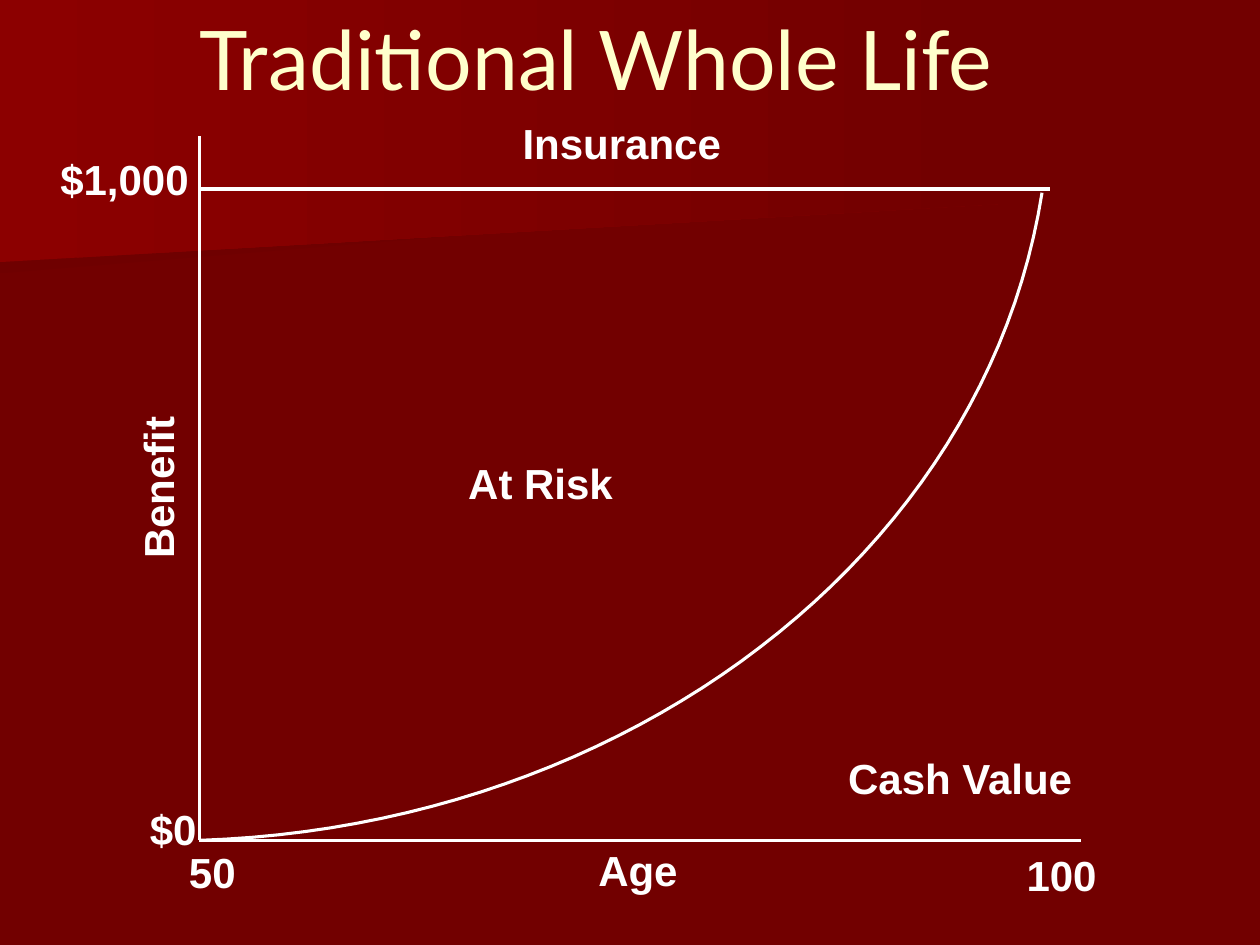
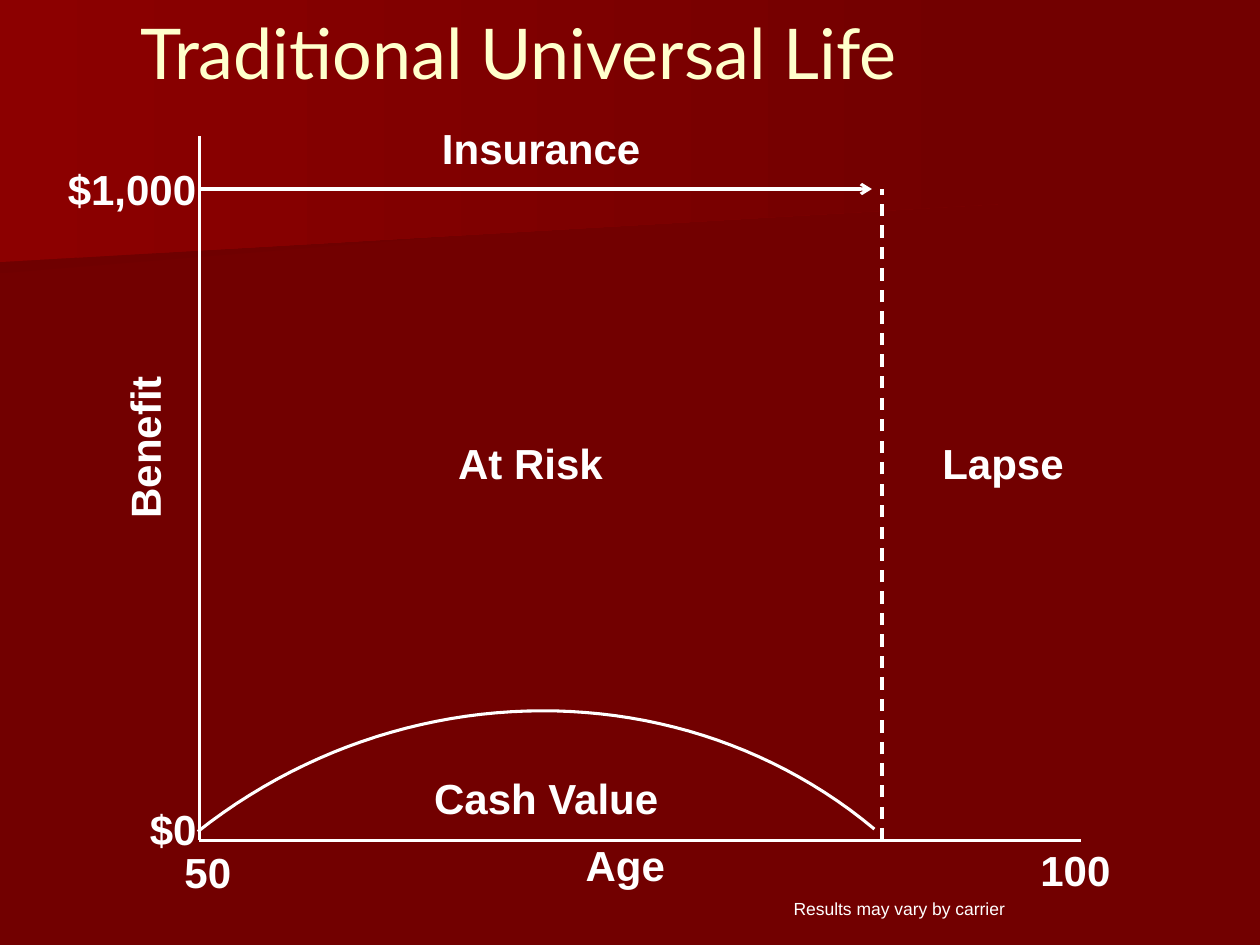
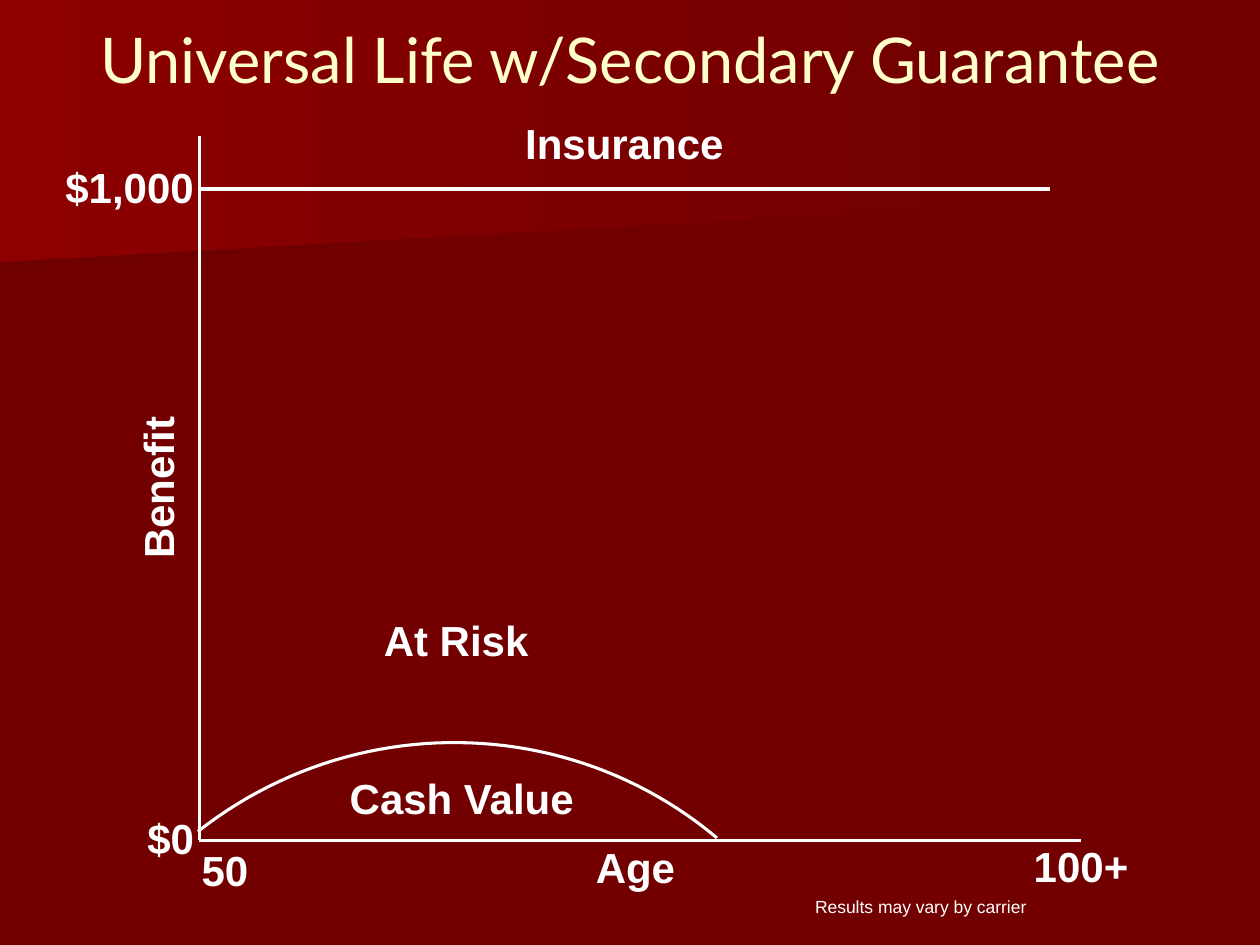
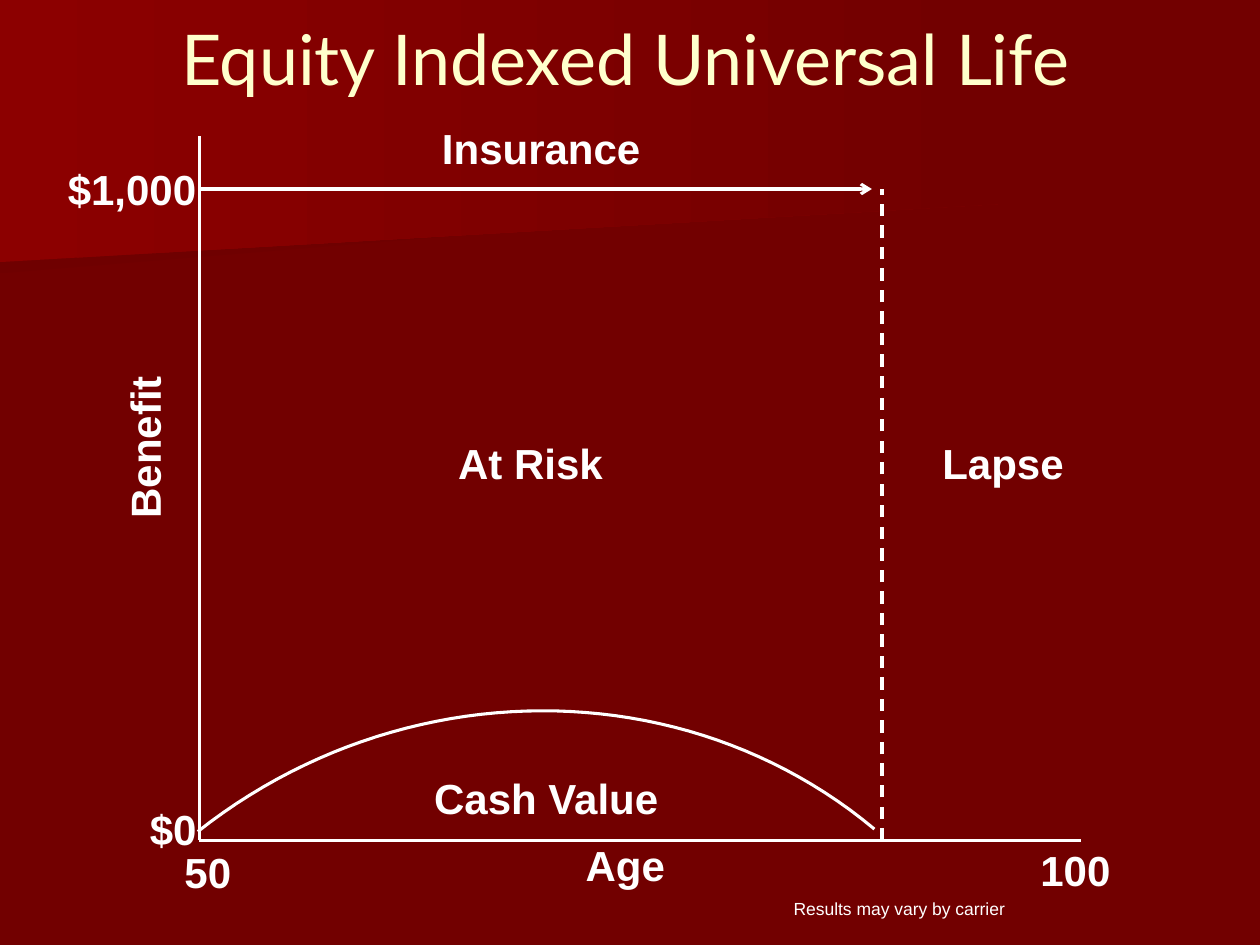
from lxml.etree import SubElement
from pptx import Presentation
from pptx.dml.color import RGBColor
from pptx.enum.dml import MSO_LINE
from pptx.enum.shapes import MSO_CONNECTOR
from pptx.enum.text import MSO_ANCHOR, MSO_AUTO_SIZE, PP_ALIGN
from pptx.oxml.ns import qn
from pptx.util import Inches, Pt

# Shared style
BACKGROUND, WHITE, CREAM = "720000", "FFFFFF", "FFFFCC"
LINE_WIDTH = 1.75
LABEL_HEIGHT = 0.5
CURVE_STEPS = 48

# Background bands: outline, left colour (each fades into the background)
BANDS = [
    ([(7.78, 1.53), (0, 2.17), (0, 1.01), (7.79, 1.01), (7.78, 1.28)], "6F0000"),
    ([(7.92, 1.62), (0, 2.08), (0, 0), (7.92, 0)], "8C0000"),
]

# Axes: shared by all charts
LEFT, TOP, RIGHT, BOTTOM = 1.58, 1.08, 8.58, 6.67
BENEFIT_LEVEL = 1.5
LAPSE_AGE = 7

# Centred labels: text, left, top, width
# Left labels: text, left, top, width, wrap
WHOLE_LIFE = {
    "benefit_end": 8.33,
    "lapses": False,
    "curve": [(1.58, 6.67), (4.99, 6.56), (7.82, 4.4), (8.27, 1.53)],
    "benefit_box": (-1.54, 3.62, 5.58),
    "centred": [("50", 1.33, 6.67, 0.71), ("100", 7.5, 6.69, 1.85),
                ("$0", 1, 6.33, 0.75), ("At Risk", 3.5, 3.58, 1.58),
                ("Cash Value", 6.58, 5.92, 2.08), ("Insurance", 1.56, 0.88, 6.75)],
    "left": [("$1,000", 0.38, 1.17, 1.51, True), ("Age", 4.65, 6.65, 1.44, True)],
    "note_at": None,
}
LAPSING = {
    "benefit_end": 6.92,
    "lapses": True,
    "curve": [(1.57, 6.6), (3.18, 5.33), (5.43, 5.32), (6.94, 6.58)],
    "benefit_box": (0.29, 3.3, 1.71),
    "centred": [("50", 0.88, 6.67, 1.54), ("100", 7.69, 6.65, 1.69),
                ("$0", 1, 6.33, 0.75), ("At Risk", 3.42, 3.42, 1.58),
                ("Cash Value", 3.17, 6.08, 2.33), ("Insurance", 0.92, 0.92, 6.75),
                ("Lapse", 7.17, 3.42, 1.58)],
    "left": [("$1,000", 0.44, 1.25, 1.53, True), ("Age", 4.55, 6.61, 0.83, False)],
    "note_at": (6.2, 7.08),
}
GUARANTEED = {
    "benefit_end": 8.33,
    "lapses": False,
    "curve": [(1.57, 6.6), (2.79, 5.64), (4.51, 5.66), (5.69, 6.65)],
    "benefit_box": (-1.54, 3.62, 5.58),
    "centred": [("50", 0.91, 6.65, 1.75), ("100+", 7.85, 6.62, 1.46),
                ("$0", 0.98, 6.4, 0.75), ("At Risk", 2.83, 4.83, 1.58),
                ("Cash Value", 2.5, 6.08, 2.33), ("Insurance", 1.58, 0.88, 6.75)],
    "left": [("$1,000", 0.42, 1.23, 1.51, True), ("Age", 4.63, 6.63, 0.92, True)],
    "note_at": (6.37, 7.06),
}
NOTE = "Results may vary by carrier"

# Slides: title, left, top, width, size, chart
SLIDES = [
    ("Traditional Whole Life ", 1.19, 0, 7.25, 47, WHOLE_LIFE),
    ("Traditional Universal Life", 0.9, -0.05, 6.43, 40, LAPSING),
    ("Universal Life w/Secondary Guarantee", 0, 0, 10, 36, GUARANTEED),
    ("Equity Indexed Universal Life", 0.2, 0, 9.52, 40, LAPSING),
]


def rgb(color):
    return RGBColor.from_string(color)


def add_text(s, text, left, top, width, height=LABEL_HEIGHT, size=24, font="Arial",
             color=WHITE, bold=True, align=PP_ALIGN.CENTER, wrap=True):
    sp = s.shapes.add_textbox(Inches(left), Inches(top), Inches(width), Inches(height))
    tf = sp.text_frame
    tf.word_wrap = wrap
    tf.auto_size = MSO_AUTO_SIZE.SHAPE_TO_FIT_TEXT
    p = tf.paragraphs[0]
    p.text, p.alignment = text, align
    p.font.size, p.font.name, p.font.bold = Pt(size), font, bold
    p.font.color.rgb = rgb(color)
    return sp


def add_title(s, text, left, top, width, size):
    sp = add_text(s, text, left, top, width, 0.92, size, "Lato", CREAM, False)
    sp.text_frame.auto_size = MSO_AUTO_SIZE.NONE
    sp.text_frame.vertical_anchor = MSO_ANCHOR.MIDDLE


def style_line(line):
    line.color.rgb = rgb(WHITE)
    line.width = Pt(LINE_WIDTH)


def add_line(s, x1, y1, x2, y2, dashed=False, arrow=False):
    cxn = s.shapes.add_connector(MSO_CONNECTOR.STRAIGHT, Inches(x1), Inches(y1),
                                 Inches(x2), Inches(y2))
    style_line(cxn.line)
    if dashed:
        cxn.line.dash_style = MSO_LINE.DASH
    if arrow:
        SubElement(cxn.line._get_or_add_ln(), qn("a:tailEnd"), type="arrow")
    SubElement(cxn._element.spPr, qn("a:effectLst"))


def add_outline(s, points, close):
    start, *rest = [(Inches(x), Inches(y)) for x, y in points]
    builder = s.shapes.build_freeform(*start)
    builder.add_line_segments(rest, close=close)
    sp = builder.convert_to_shape()
    sp.shadow.inherit = False
    return sp


def add_band(s, points, color):
    sp = add_outline(s, points, True)
    sp.line.fill.background()
    sp.fill.gradient()
    sp.fill.gradient_angle = 0
    for stop, stop_color in zip(sp.fill.gradient_stops, (color, BACKGROUND)):
        stop.color.rgb = rgb(stop_color)


def bezier(controls, t):
    """Point at t on a cubic curve."""
    weights = ((1 - t) ** 3, 3 * t * (1 - t) ** 2, 3 * t ** 2 * (1 - t), t ** 3)
    return tuple(sum(w * v for w, v in zip(weights, axis)) for axis in zip(*controls))


def add_curve(s, controls):
    points = [bezier(controls, i / CURVE_STEPS) for i in range(CURVE_STEPS + 1)]
    sp = add_outline(s, points, False)
    sp.fill.background()
    style_line(sp.line)


def add_benefit_chart(s, chart):
    # Axes, benefit level and cash value
    add_line(s, LEFT, TOP, LEFT, BOTTOM)
    add_line(s, LEFT, BOTTOM, RIGHT, BOTTOM)
    add_line(s, LEFT, BENEFIT_LEVEL, chart["benefit_end"], BENEFIT_LEVEL,
             arrow=chart["lapses"])
    add_curve(s, chart["curve"])
    if chart["lapses"]:
        add_line(s, LAPSE_AGE, BOTTOM, LAPSE_AGE, BENEFIT_LEVEL, dashed=True)

    # Labels
    add_text(s, "Benefit", *chart["benefit_box"]).rotation = 270
    for label in chart["centred"]:
        add_text(s, *label)
    for *label, wrap in chart["left"]:
        add_text(s, *label, align=PP_ALIGN.LEFT, wrap=wrap)
    if chart["note_at"]:
        add_text(s, NOTE, *chart["note_at"], 1.88, 0.27, size=10, bold=False,
                 align=PP_ALIGN.LEFT, wrap=False)


def main():
    prs = Presentation()
    prs.slide_width, prs.slide_height = Inches(10), Inches(7.5)
    fill = prs.slide_master.background.fill
    fill.solid()
    fill.fore_color.rgb = rgb(BACKGROUND)

    for *title, chart in SLIDES:
        s = prs.slides.add_slide(prs.slide_layouts[6])
        for band in BANDS:
            add_band(s, *band)
        add_title(s, *title)
        add_benefit_chart(s, chart)
    prs.save("out.pptx")


if __name__ == "__main__":
    main()
